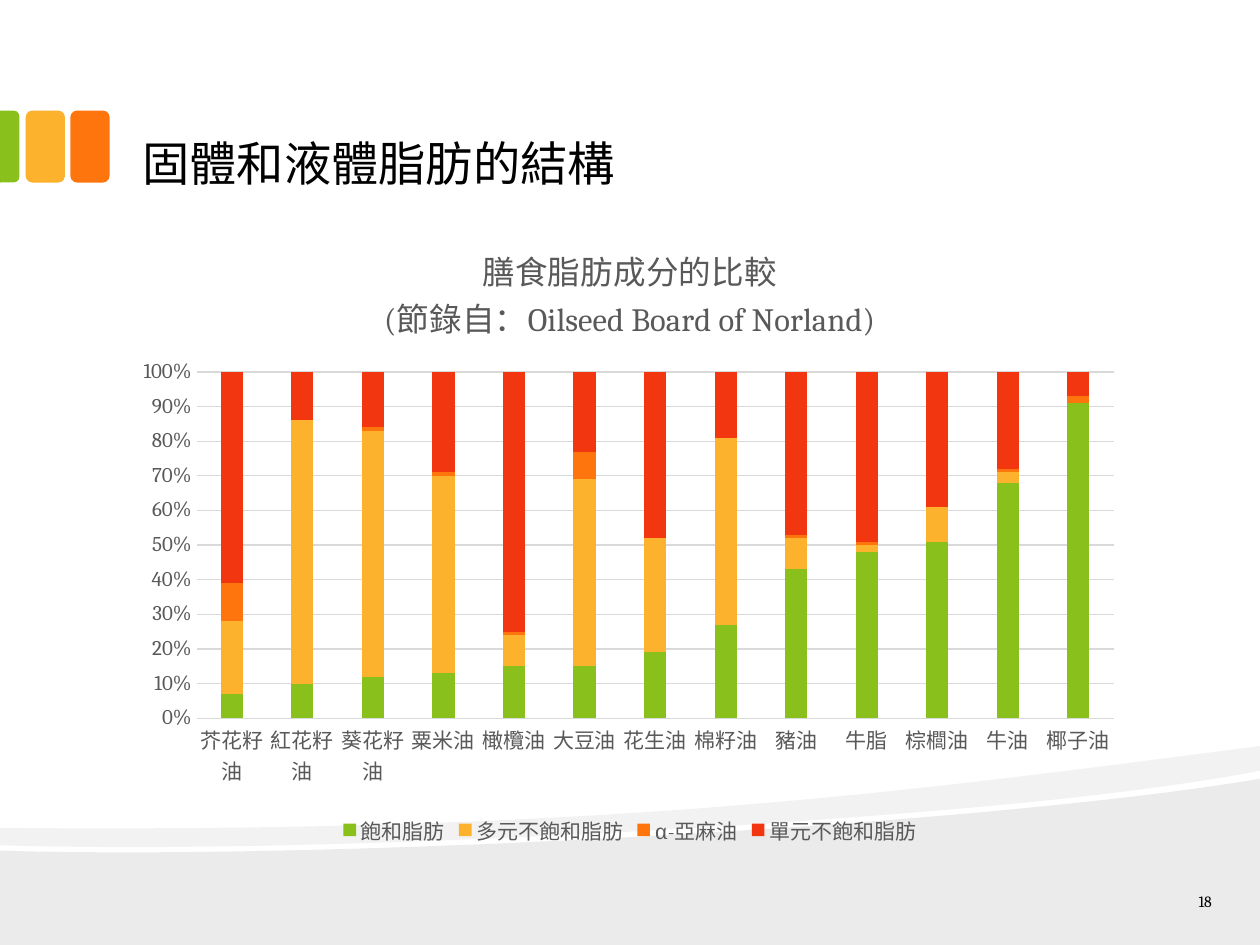
"""Build a slide with a stacked chart comparing the make-up of dietary fats."""
import lxml.etree
import pptx
import pptx.chart.data
import pptx.dml.color
import pptx.enum.chart
import pptx.enum.shapes
import pptx.enum.text
import pptx.oxml
import pptx.oxml.ns
import pptx.util

Cm = pptx.util.Cm
Pt = pptx.util.Pt
RGBColor = pptx.dml.color.RGBColor
MSO_SHAPE = pptx.enum.shapes.MSO_SHAPE
qn = pptx.oxml.ns.qn

GREEN = RGBColor(0x89, 0xC0, 0x1C)
YELLOW = RGBColor(0xFC, 0xB2, 0x2C)
ORANGE = RGBColor(0xFE, 0x75, 0x0E)
RED = RGBColor(0xF2, 0x36, 0x10)
BLACK = RGBColor(0, 0, 0)
GREY = RGBColor(0x59, 0x59, 0x59)
PALE = RGBColor(0xD9, 0xD9, 0xD9)
FONT = "Cambria"


def style(font, size, color):
    font.name = FONT
    font.size = Pt(size)
    font.bold = False
    font.color.rgb = color


def curve(a, b, c, d, steps=30):
    ts = [i / steps for i in range(steps + 1)]
    return [tuple((1 - t) ** 3 * p + 3 * (1 - t) ** 2 * t * q + 3 * (1 - t) * t ** 2 * u + t ** 3 * v
                  for p, q, u, v in zip(a, b, c, d)) for t in ts]


prs = pptx.Presentation()
prs.slide_width = Cm(25.4)
prs.slide_height = Cm(19.05)
s = prs.slides.add_slide(prs.slide_layouts[6])

hill = [(25.4, 19.05), (0, 19.05)]
hill += curve((0, 17.15), (6.71, 17.35), (19.86, 16.64), (25.4, 15.7))
band = curve((25.4, 15.54), (19.61, 16.08), (14.68, 16.31), (9.5, 16.5), 1)[:1]
band += curve((25.4, 15.54), (23.93, 15.82), (21.89, 16.08), (19.61, 16.28))
band += curve((19.61, 16.28), (13.28, 16.84), (4.9, 17.2), (0, 17.04))
band += curve((0, 16.69), (12.42, 16.81), (18.49, 15.93), (25.4, 15.04))
for points, alpha in ((hill, 8), (band, 5)):
    points = [(Cm(x), Cm(y)) for x, y in points]
    builder = s.shapes.build_freeform(*points[0])
    builder.add_line_segments(points[1:], close=True)
    sp = builder.convert_to_shape()
    sp.shadow.inherit = False
    sp.line.fill.background()
    sp.fill.solid()
    sp.fill.fore_color.rgb = BLACK
    color = sp.fill._xPr.find(".//" + qn("a:srgbClr"))
    lxml.etree.SubElement(color, qn("a:alpha")).set("val", str(alpha * 1000))

tabs = [
    (MSO_SHAPE.ROUNDED_RECTANGLE, 1.42, 2.23, 0.79, 1.45, 0, ORANGE),
    (MSO_SHAPE.ROUNDED_RECTANGLE, 0.52, 2.23, 0.79, 1.45, 0, YELLOW),
    (MSO_SHAPE.ROUND_2_SAME_RECTANGLE, -0.53, 2.76, 1.45, 0.39, 90, GREEN),
]
for kind, x, y, w, h, angle, color in tabs:
    sp = s.shapes.add_shape(kind, Cm(x), Cm(y), Cm(w), Cm(h))
    sp.rotation = angle
    if angle:
        sp.adjustments[0] = 0.29
    sp.shadow.inherit = False
    sp.fill.solid()
    sp.fill.fore_color.rgb = color
    sp.line.fill.background()

ANCHOR = pptx.enum.text.MSO_ANCHOR
ALIGN = pptx.enum.text.PP_ALIGN
texts = [
    ("固體和液體脂肪的結構", 2.54, 0.43, 20.32, 3.61, 27, ANCHOR.BOTTOM, ALIGN.LEFT),
    ("18", 23.06, 17.91, 1.7, 0.51, 9, ANCHOR.MIDDLE, ALIGN.RIGHT),
]
for text, x, y, w, h, size, anchor, align in texts:
    tf = s.shapes.add_textbox(Cm(x), Cm(y), Cm(w), Cm(h)).text_frame
    tf.word_wrap = True
    tf.vertical_anchor = anchor
    tf.margin_left = tf.margin_right = Cm(0.33)
    tf.margin_top = tf.margin_bottom = Cm(0.18)
    p = tf.paragraphs[0]
    p.alignment = align
    r = p.add_run()
    r.text = text
    style(r.font, size, BLACK)

data = pptx.chart.data.CategoryChartData()
data.categories = ["芥花籽油", "紅花籽油", "葵花籽油", "粟米油", "橄欖油", "大豆油", "花生油",
                   "棉籽油", "豬油", "牛脂", "棕櫚油", "牛油", "椰子油"]
fats = [
    ("飽和脂肪", GREEN, [7, 10, 12, 13, 15, 15, 19, 27, 43, 48, 51, 68, 91]),
    ("多元不飽和脂肪", YELLOW, [21, 76, 71, 57, 9, 54, 33, 54, 9, 2, 10, 3, 0]),
    ("α-亞麻油", ORANGE, [11, 0, 1, 1, 1, 8, 0, 0, 1, 1, 0, 1, 2]),
    ("單元不飽和脂肪", RED, [61, 14, 16, 29, 75, 23, 48, 19, 47, 49, 39, 28, 7]),
]
for name, color, values in fats:
    data.add_series(name, values)
chart = s.shapes.add_chart(pptx.enum.chart.XL_CHART_TYPE.COLUMN_STACKED_100,
                           Cm(2.54), Cm(4.45), Cm(20.32), Cm(12.7), data).chart
style(chart.font, 10, BLACK)

tf = chart.chart_title.text_frame
for i, line in enumerate(["膳食脂肪成分的比較", "(節錄自：Oilseed Board of Norland)"]):
    p = tf.add_paragraph() if i else tf.paragraphs[0]
    r = p.add_run()
    r.text = line
    style(r.font, 18.6, GREY)
chart.chart_title.include_in_layout = False

plot = chart.plots[0]
plot.gap_width = 219
plot.overlap = 100
plot.vary_by_categories = False
for series, (name, color, values) in zip(plot.series, fats):
    series.format.fill.solid()
    series.format.fill.fore_color.rgb = color

for axis in (chart.category_axis, chart.value_axis):
    axis.major_tick_mark = axis.minor_tick_mark = pptx.enum.chart.XL_TICK_MARK.NONE
    style(axis.tick_labels.font, 12, GREY)
chart.value_axis.maximum_scale = 1
chart.value_axis.major_unit = 0.1
chart.value_axis.tick_labels.number_format = "0%"
chart.value_axis.tick_labels.number_format_is_linked = False
chart.value_axis.format.line.fill.background()
for line in (chart.category_axis.format.line, chart.value_axis.major_gridlines.format.line):
    line.color.rgb = PALE
    line.width = Pt(0.75)

chart.has_legend = True
chart.legend.position = pptx.enum.chart.XL_LEGEND_POSITION.BOTTOM
chart.legend.include_in_layout = False
style(chart.legend.font, 12, GREY)

area = chart._chartSpace.find(".//" + qn("c:plotArea"))
layout = area.find(qn("c:layout"))
if layout is None:
    layout = pptx.oxml.parse_xml('<c:layout xmlns:c="%s"/>' % pptx.oxml.ns.nsuri("c"))
    area.insert(0, layout)
manual = lxml.etree.SubElement(layout, qn("c:manualLayout"))
for tag, value in (("layoutTarget", "inner"), ("xMode", "edge"), ("yMode", "edge"),
                   ("x", "0.07"), ("y", "0.24"), ("w", "0.91"), ("h", "0.55")):
    lxml.etree.SubElement(manual, qn("c:" + tag)).set("val", value)

prs.save("out.pptx")
